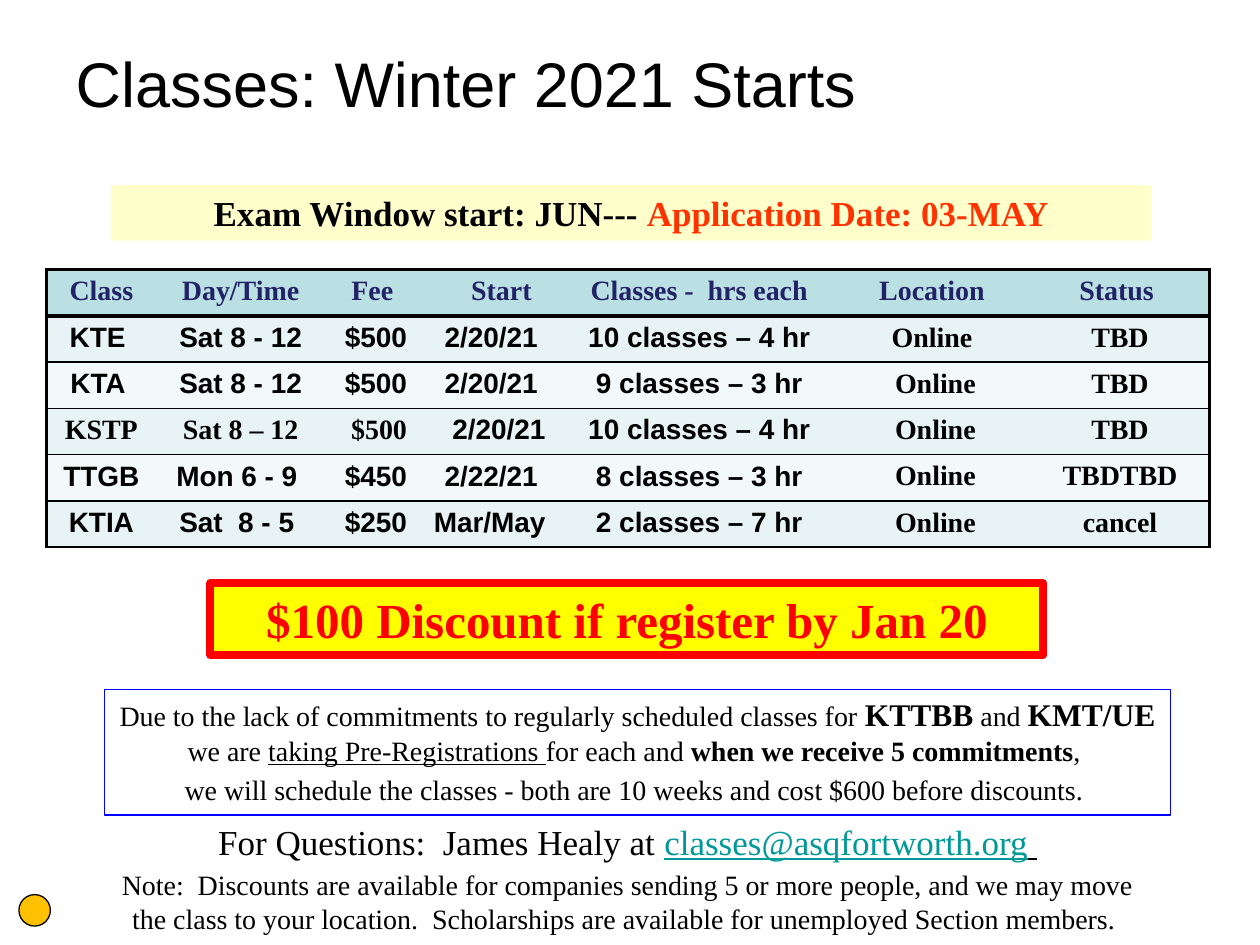
"""Build the slide announcing the Winter 2021 class starts."""
from lxml import etree
from pptx import Presentation
from pptx.dml.color import RGBColor
from pptx.enum.shapes import MSO_SHAPE as Shape
from pptx.enum.text import MSO_ANCHOR as Anchor, PP_ALIGN as Align
from pptx.oxml import parse_xml
from pptx.oxml.ns import nsdecls, qn
from pptx.util import Inches, Pt

SERIF, SANS = "Times New Roman", "Arial"
BLACK = "000000"


def color(hex_value):
    return RGBColor.from_string(hex_value)


def write(paragraph, runs, size, align=Align.CENTER, font=SERIF, tint=BLACK, bold=False):
    paragraph.alignment = align
    for text, changes in runs:
        run = paragraph.add_run()
        run.text = text
        run.font.name = changes.get("font", font)
        run.font.size = Pt(changes.get("size", size))
        run.font.bold = changes.get("bold", bold)
        run.font.underline = changes.get("underline", False)
        run.font.color.rgb = color(changes.get("tint", tint))


prs = Presentation()
prs.slide_width, prs.slide_height = Inches(10), Inches(7.5)
slide = prs.slides.add_slide(prs.slide_layouts[5])

title = slide.shapes.title
title.left, title.top, title.width, title.height = [Inches(v) for v in (0.5, 0.3, 9, 0.7)]
title.text_frame.vertical_anchor = Anchor.MIDDLE
write(title.text_frame.paragraphs[0], [("Classes: Winter 2021 Starts", {})], 36, Align.LEFT, SANS)

text_lines = [
    ((0.75, 6.84, 8.46, 0.64), True, 16, [
        ("Note:  Discounts are available for companies sending 5 or more people, and we may move "
         "the class to your location.  Scholarships are available for unemployed Section members. ", {})]),
    ((1.54, 6.46, 6.88, 0.44), False, 20, [
        ("For Questions:  James Healy at ", {}),
        ("classes@asqfortworth.org", {"tint": "009999", "underline": True}),
        (" ", {"underline": True})]),
]
for place, wraps, size, runs in text_lines:
    frame = slide.shapes.add_textbox(*[Inches(v) for v in place]).text_frame
    frame.word_wrap = wraps
    write(frame.paragraphs[0], runs, size)

schedule = [
    ["Class", "Day/Time", "Fee", "Start  ", "Classes -  hrs each", "Location ", "Status "],
    ["KTE ", "Sat 8 - 12", "$500 ", "2/20/21 ", "10 classes – 4 hr", "Online ", "TBD"],
    ["KTA ", "Sat 8 - 12", "$500 ", "2/20/21 ", " 9 classes – 3 hr ", "Online", "TBD"],
    ["KSTP", "Sat 8 – 12", "$500", "2/20/21", "10 classes – 4 hr", "Online", "TBD"],
    ["TTGB", "Mon 6 - 9 ", "$450 ", "2/22/21 ", " 8 classes – 3 hr ", "Online", "TBDTBD"],
    ["KTIA", "Sat  8 - 5 ", "$250 ", "Mar/May", " 2 classes – 7 hr ", "Online", "cancel"],
]
column_widths = [0.87, 1.34, 0.75, 1.1, 2.24, 1.51, 1.42]
last_column = len(column_widths) - 1
table = slide.shapes.add_table(len(schedule), len(column_widths), Inches(0.37), Inches(2.14),
                               Inches(9.22), Inches(2.2)).table
for column, width in zip(table.columns, column_widths):
    column.width = Inches(width)
for r, entries in enumerate(schedule):
    table.rows[r].height = Inches(2.2 / len(schedule))
    for c, entry in enumerate(entries):
        cell = table.cell(r, c)
        borders = {
            "lnL": 2.25 if c == 0 else 0,
            "lnR": 2.25 if c == last_column else 0,
            "lnT": 2.25 if r < 2 else 1,
            "lnB": 2.25 if r == 0 else 1,
        }
        for side, weight in borders.items():
            paint = f'<a:solidFill><a:srgbClr val="{BLACK}"/></a:solidFill>' if weight else "<a:noFill/>"
            cell._tc.get_or_add_tcPr().append(parse_xml(
                f'<a:{side} {nsdecls("a")} w="{Pt(weight)}">{paint}</a:{side}>'))
        cell.fill.solid()
        cell.fill.fore_color.rgb = color("BBE0E3" if r == 0 else "E7F3F4" if r % 2 else "F3F9FA")
        serif = r == 0 or c > 4 or (r == 3 and c < 3)
        right = c == 3 or (c == 2 and r > 0)
        write(cell.text_frame.paragraphs[0], [(entry, {})], 16,
              Align.RIGHT if right else Align.CENTER, SERIF if serif else SANS,
              "222267" if r == 0 else BLACK, True)

strong = {"size": 18, "bold": True}
panels = [
    (Shape.RECTANGLE, (1.67, 4.63, 6.61, 0.57), "FFFF00", ("FF0000", 4.5), 28, [
        [("$100 Discount if register by Jan 20", {"tint": "FF0000", "bold": True})]]),
    (Shape.RECTANGLE, (0.83, 5.47, 8.46, 1), None, ("0000FF", 0.75), 16, [
        [("Due to the lack of commitments to regularly scheduled classes for ", {}),
         ("KTTBB", strong), (" and ", {}), ("KMT/UE ", strong), ("we are ", {}),
         ("taking Pre-Registrations ", {"underline": True}), ("for each and ", {}),
         ("when we receive 5 commitments", {"bold": True}), (", ", {})],
        [("we will schedule the classes - both are 10 weeks and cost $600 before discounts. ", {})]]),
    (Shape.RECTANGLE, (0.88, 1.47, 8.26, 0.44), "FFFFCC", None, 20, [
        [("Exam Window start: JUN--- ", {"bold": True}),
         ("Application Date: 03-MAY", {"bold": True, "tint": "FF3300"})]]),
    (Shape.OVAL, (0.15, 7.1, 0.25, 0.25), "FFC000", (BLACK, 0.75), 16, []),
]
for outline, place, fill, line, size, paragraphs in panels:
    panel = slide.shapes.add_shape(outline, *[Inches(v) for v in place])
    panel.shadow.inherit = False
    if fill:
        panel.fill.solid()
        panel.fill.fore_color.rgb = color(fill)
    else:
        panel.fill.background()
    if line:
        panel.line.color.rgb = color(line[0])
        panel.line.width = Pt(line[1])
        etree.SubElement(panel.line._get_or_add_ln(), qn("a:round"))
    else:
        panel.line.fill.background()
    frame = panel.text_frame
    frame.word_wrap = True
    frame.vertical_anchor = Anchor.TOP
    for i, runs in enumerate(paragraphs):
        paragraph = frame.add_paragraph() if i else frame.paragraphs[0]
        if i:
            paragraph.space_before = Pt(size * 0.2)
        write(paragraph, runs, size)

prs.save("out.pptx")
